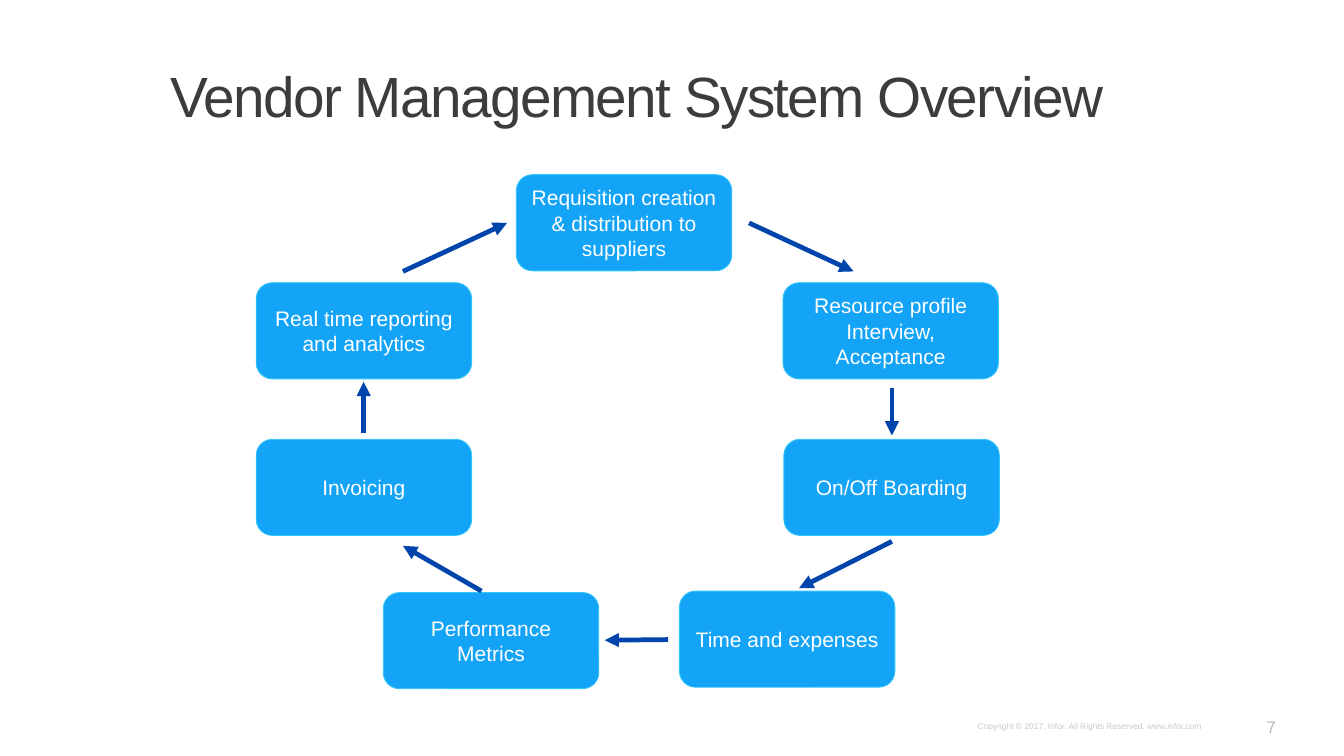
"""Build the vendor management system overview slide as a cycle of seven steps."""
from lxml.etree import SubElement
from pptx import Presentation
from pptx.dml.color import RGBColor
from pptx.enum.shapes import MSO_CONNECTOR, MSO_SHAPE
from pptx.enum.text import MSO_ANCHOR, MSO_AUTO_SIZE, PP_ALIGN
from pptx.oxml.ns import qn
from pptx.util import Cm, Pt

THEME = {
    "font": "Arial",
    "title": (54, "3C3C3C"),
    "step": (20, "FFFFFF"),
    "copyright": (8, "C9C9C9"),
    "number": (16, "B5B5B5"),
    "box": "13A3F7",
    "border": "34C5FA",
    "arrow": "0045AC",
}
TITLE = "Vendor Management System Overview"
COPYRIGHT = "Copyright © 2017. Infor. All Rights Reserved. www.infor.com"
PAGE = "7"
STEP_SIZE = (7.24, 3.23)
STEPS = [
    (17.35, 5.87, ["Requisition creation & distribution to suppliers"]),
    (26.31, 9.5, ["Resource profile", "Interview, Acceptance"]),
    (26.34, 14.76, ["On/Off Boarding"]),
    (22.83, 19.86, ["Time and expenses"]),
    (12.88, 19.91, ["Performance Metrics"]),
    (8.61, 14.76, ["Invoicing"]),
    (8.61, 9.5, ["Real time reporting and analytics"]),
]
ARROWS = [
    (25.17, 7.49, 28.68, 9.12),
    (29.97, 13.03, 29.97, 14.63),
    (29.97, 18.19, 26.85, 19.76),
    (22.45, 21.49, 20.32, 21.51),
    (16.18, 19.86, 13.54, 18.34),
    (12.22, 14.55, 12.22, 12.83),
    (13.54, 9.12, 17.04, 7.49),
]
NO_MARGIN = {side: 0 for side in
             ("margin_left", "margin_top", "margin_right", "margin_bottom")}


def apply(target, values):
    for name, value in values.items():
        setattr(target, name, value)


def color(key):
    return RGBColor.from_string(THEME[key])


def write(shape, lines, style, align=PP_ALIGN.CENTER, **frame_values):
    frame = shape.text_frame
    apply(frame, {"word_wrap": True, "vertical_anchor": MSO_ANCHOR.MIDDLE,
                  **frame_values})
    frame.text = "\n".join(lines)
    size, ink = THEME[style]
    for paragraph in frame.paragraphs:
        paragraph.alignment = align
        for run in paragraph.runs:
            apply(run.font, {"name": THEME["font"], "size": Pt(size)})
            run.font.color.rgb = RGBColor.from_string(ink)
    return frame.paragraphs[0]


def add_text(slide, place, text, style, **values):
    return write(slide.shapes.add_textbox(*map(Cm, place)), [text], style, **values)


def add_step(slide, left, top, lines):
    step = slide.shapes.add_shape(
        MSO_SHAPE.ROUNDED_RECTANGLE, *map(Cm, (left, top, *STEP_SIZE)))
    step.shadow.inherit = False
    step.fill.solid()
    step.fill.fore_color.rgb = color("box")
    step.line.color.rgb = color("border")
    step.line.width = Pt(0.85)
    write(step, lines, "step")


def add_arrow(slide, ends):
    arrow = slide.shapes.add_connector(MSO_CONNECTOR.STRAIGHT, *map(Cm, ends))
    arrow.line.color.rgb = color("arrow")
    arrow.line.width = Pt(4.5)
    SubElement(arrow.line._get_or_add_ln(), qn("a:tailEnd"), type="triangle")
    SubElement(arrow._element.spPr, qn("a:effectLst"))


def main():
    deck = Presentation()
    apply(deck, {"slide_width": Cm(45.16), "slide_height": Cm(25.4)})
    slide = deck.slides.add_slide(deck.slide_layouts[6])

    add_text(slide, (40.28, 23.62, 4.88, 1.57), PAGE, "number")
    add_text(slide, (32.72, 24.23, 7.67, 0.33), COPYRIGHT, "copyright",
             align=PP_ALIGN.RIGHT, **NO_MARGIN | {
                 "word_wrap": False,
                 "auto_size": MSO_AUTO_SIZE.SHAPE_TO_FIT_TEXT})
    title = add_text(slide, (5.72, 1.35, 34.57, 5.08), TITLE, "title",
                     align=PP_ALIGN.LEFT, **NO_MARGIN | {
                         "margin_bottom": Cm(2.22),
                         "vertical_anchor": MSO_ANCHOR.BOTTOM})
    title.line_spacing = 0.85
    title.runs[0]._r.get_or_add_rPr().set("spc", "-150")

    for step in STEPS:
        add_step(slide, *step)
    for ends in ARROWS:
        add_arrow(slide, ends)
    deck.save("out.pptx")


if __name__ == "__main__":
    main()
